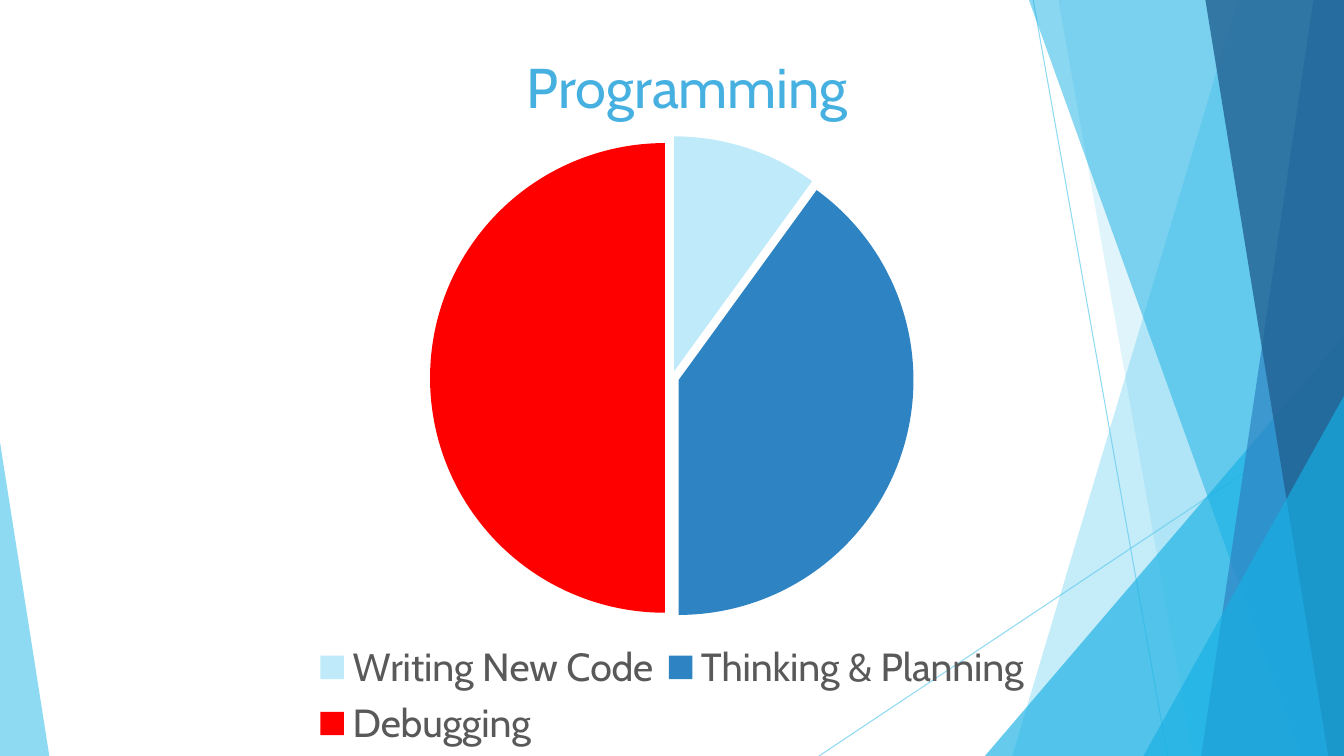
from lxml import etree
from pptx import Presentation
from pptx.chart.data import CategoryChartData as Data
from pptx.dml.color import RGBColor as RGB
from pptx.enum.chart import XL_CHART_TYPE as Chart, XL_LEGEND_POSITION as Side
from pptx.enum.shapes import MSO_CONNECTOR as Link, MSO_SHAPE as Form
from pptx.oxml.ns import qn
from pptx.util import Pt

PX = 9525
WIDE, HIGH = 1280, 720
FONT = "Cabin"
HUE = {
    "sky": "5FCBEF", "cyan": "17B0E4", "blue": "2E83C3", "navy": "226292",
    "pale": "BFEAF9", "red": "FF0000", "title": "46B1E1", "gray": "595959",
}


def tint(fill, name, alpha):
    """Fill with a named colour at an opacity in percent."""
    fill.solid()
    fill.fore_color.rgb = RGB.from_string(HUE[name])
    color = fill._xPr.find(qn("a:solidFill"))[0]
    etree.SubElement(color, qn("a:alpha")).set("val", str(alpha * 1000))


def place(node, index, **spots):
    """Set a manual layout, as fractions of the chart, on a chart part."""
    layout = node.find(qn("c:layout"))
    if layout is None:
        layout = etree.Element(qn("c:layout"))
        node.insert(index, layout)
    manual = etree.SubElement(layout, qn("c:manualLayout"))
    for tag, value in spots.items():
        etree.SubElement(manual, qn("c:" + tag)).set("val", str(value))


deck = Presentation()
deck.slide_width, deck.slide_height = WIDE * PX, HIGH * PX
slide = deck.slides.add_slide(deck.slide_layouts[6])
shapes = slide.shapes

# Thin crossing lines
for ends in [(984, 0, 1112, HIGH), (WIDE, 387, 780, HIGH)]:
    line = shapes.add_connector(Link.STRAIGHT, *[n * PX for n in ends])
    line.line.width = Pt(0.75)
    tint(line.line.fill, "sky", 70)
    etree.SubElement(line.element.spPr, qn("a:effectLst"))

# Bands: top x and bottom x of the left edge; triangles: left, top, width, apex
facets = [
    ("band", (1179, 964), "sky", 36),
    ("band", (1008, 1136), "sky", 20),
    ("triangle", (938, 320, 342, 1), "cyan", 66),
    ("band", (980, 1239), "cyan", 50),
    ("band", (1251, 1144), "blue", 70),
    ("band", (1148, 1265), "navy", 80),
    ("triangle", (1089, 377, 191, 1), "cyan", 66),
    ("triangle", (0, 421, 47, 0), "sky", 70),
]
for kind, spots, hue, alpha in facets:
    if kind == "band":
        head, foot = spots
        path = shapes.build_freeform(head, 0, scale=PX)
        path.add_line_segments([(WIDE, 0), (WIDE, HIGH), (foot, HIGH)])
        facet = path.convert_to_shape()
    else:
        left, top, width, apex = spots
        box = (left, top, width, HIGH - top)
        facet = shapes.add_shape(Form.ISOSCELES_TRIANGLE, *[n * PX for n in box])
        facet.adjustments[0] = apex
    facet.shadow.inherit = False
    facet.line.fill.background()
    tint(facet.fill, hue, alpha)

# Pie chart
data = Data()
data.categories = ["Writing New Code", "Thinking & Planning", "Debugging"]
data.add_series("Series 1", [10, 40, 50])
frame = shapes.add_chart(Chart.PIE, 110 * PX, 0, 1060 * PX, HIGH * PX, data)
chart = frame.chart
chart.font.name, chart.font.size = FONT, Pt(10)

plot = chart.plots[0]
plot.vary_by_categories = True
series = plot.series[0]
for index, hue in enumerate(["pale", "blue", "red"]):
    fill = series.points[index].format.fill
    fill.solid()
    fill.fore_color.rgb = RGB.from_string(HUE[hue])
burst = etree.Element(qn("c:explosion"), val="3")
series._element.find(qn("c:tx")).addnext(burst)

chart.has_title = True
title = chart.chart_title
title.include_in_layout = False
title.text_frame.text = "Programming"
chart.has_legend = True
legend = chart.legend
legend.position = Side.BOTTOM
legend.include_in_layout = False
heading = title.text_frame.paragraphs[0].font
for font, size, hue in [(heading, 40, "title"), (legend.font, 28, "gray")]:
    font.name, font.size, font.bold = FONT, Pt(size), False
    font.color.rgb = RGB.from_string(HUE[hue])

area = chart.element.find(".//" + qn("c:plotArea"))
place(area, 0, layoutTarget="inner", xMode="edge", yMode="edge",
      x=0.28, y=0.18, w=0.44, h=0.64)
place(title._element, 1, xMode="edge", yMode="edge", x=0.36, y=0.05)
place(legend._element, 1, xMode="edge", yMode="edge",
      x=0.17, y=0.84, w=0.66, h=0.16)

deck.save("out.pptx")
